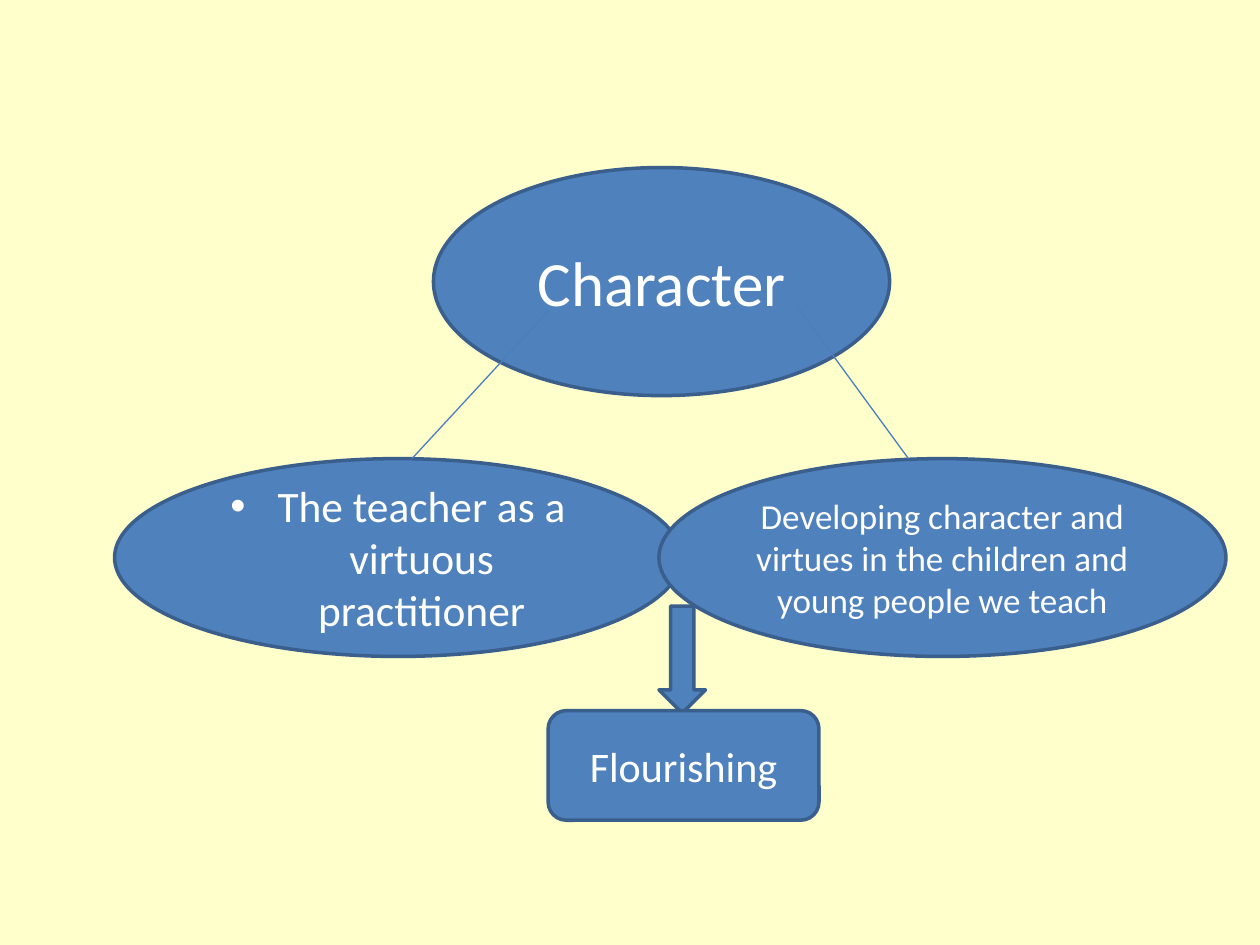
from dataclasses import dataclass

from lxml import etree
from pptx import Presentation
from pptx import util as u
from pptx.dml.color import RGBColor
from pptx.enum import shapes, text
from pptx.oxml.ns import qn

COLUMNS, ROWS = 100, 75
CELL = u.Inches(0.1)
Preset = shapes.MSO_SHAPE


@dataclass(frozen=True)
class Theme:
    background: str = "FFFFCC"
    fill: str = "4F81BD"
    outline: str = "3A5F8C"
    link: str = "4B7EBC"
    ink: str = "FFFFFF"
    font: str = "Calibri"
    heading: float = 36
    practitioner: float = 24.8
    outcome: float = 24
    detail: float = 20
    outline_width: float = 2
    link_width: float = 0.75


@dataclass(frozen=True)
class Box:
    """An area in grid columns and rows."""
    column: float
    row: float
    width: float
    height: float


@dataclass(frozen=True)
class Node:
    preset: Preset
    box: Box
    label: str = ""
    size: float = 0


@dataclass(frozen=True)
class Link:
    start: tuple[float, float]
    end: tuple[float, float]


THEME = Theme()
BRANCH_ROW, BRANCH_WIDTH, BRANCH_HEIGHT = 36.4, 45, 15.7
RIGHT_COLUMN = 52.3

PRACTITIONER = Node(Preset.OVAL, Box(9.1, BRANCH_ROW, BRANCH_WIDTH, BRANCH_HEIGHT),
                    "The teacher as a virtuous practitioner", THEME.practitioner)
CHARACTER = Node(Preset.OVAL, Box(34.4, 13.3, 36.2, 18.1), "Character", THEME.heading)
PUPILS = Node(Preset.OVAL, Box(RIGHT_COLUMN, BRANCH_ROW, BRANCH_WIDTH, BRANCH_HEIGHT),
              "Developing character and virtues in the children and young people we teach",
              THEME.detail)
ARROW = Node(Preset.DOWN_ARROW, Box(RIGHT_COLUMN, 48.1, 3.7, 8.5))
FLOURISHING = Node(Preset.ROUNDED_RECTANGLE, Box(43.5, 56.4, 21.5, 8.7),
                   "Flourishing", THEME.outcome)
LINKS = (Link((43.5, 24.7), (32.7, BRANCH_ROW)),
         Link((72.1, BRANCH_ROW), (63.4, 24.5)))


def grid(*cells: float) -> list[int]:
    return [round(cell * CELL) for cell in cells]


def place(box: Box) -> list[int]:
    return grid(box.column, box.row, box.width, box.height)


def write(shape, label: str, *, size: float, color: str = THEME.ink) -> None:
    frame = shape.text_frame
    frame.word_wrap = True
    frame.auto_size = text.MSO_AUTO_SIZE.NONE
    frame.vertical_anchor = text.MSO_ANCHOR.MIDDLE
    frame.text = label
    paragraph = frame.paragraphs[0]
    paragraph.alignment = text.PP_ALIGN.CENTER
    paragraph.space_before = u.Pt(0)
    font = paragraph.runs[0].font
    font.name, font.size = THEME.font, u.Pt(size)
    font.color.rgb = RGBColor.from_string(color)


def paint(shape, node: Node) -> None:
    """Give a shape the node's fill, outline and label."""
    shape.fill.solid()
    shape.fill.fore_color.rgb = RGBColor.from_string(THEME.fill)
    shape.line.color.rgb = RGBColor.from_string(THEME.outline)
    shape.line.width = u.Pt(THEME.outline_width)
    if node.label:
        write(shape, node.label, size=node.size)


def draw_node(slide, node: Node) -> None:
    shape = slide.shapes.add_shape(node.preset, *place(node.box))
    shape.shadow.inherit = False
    paint(shape, node)


def fill_body(body, node: Node) -> None:
    """Turn the body placeholder into an unbulleted ellipse."""
    body.left, body.top, body.width, body.height = place(node.box)
    outline = etree.SubElement(body._element.spPr, qn("a:prstGeom"), prst="ellipse")
    etree.SubElement(outline, qn("a:avLst"))
    properties = body.text_frame.paragraphs[0]._p.get_or_add_pPr()
    properties.set("marL", "0")
    properties.set("indent", "0")
    etree.SubElement(properties, qn("a:buNone"))
    paint(body, node)


def draw_link(slide, link: Link) -> None:
    line = slide.shapes.add_connector(shapes.MSO_CONNECTOR.STRAIGHT,
                                      *grid(*link.start, *link.end))
    line.line.color.rgb = RGBColor.from_string(THEME.link)
    line.line.width = u.Pt(THEME.link_width)
    etree.SubElement(line._element.spPr, qn("a:effectLst"))


def main() -> None:
    deck = Presentation()
    deck.slide_width, deck.slide_height = COLUMNS * CELL, ROWS * CELL
    slide = deck.slides.add_slide(deck.slide_layouts[1])
    slide.background.fill.solid()
    slide.background.fill.fore_color.rgb = RGBColor.from_string(THEME.background)
    title = slide.shapes.title._element
    title.getparent().remove(title)

    fill_body(slide.placeholders[1], PRACTITIONER)
    for node in (CHARACTER, PUPILS):
        draw_node(slide, node)
    for link in LINKS:
        draw_link(slide, link)
    for node in (ARROW, FLOURISHING):
        draw_node(slide, node)
    deck.save("out.pptx")


if __name__ == "__main__":
    main()
